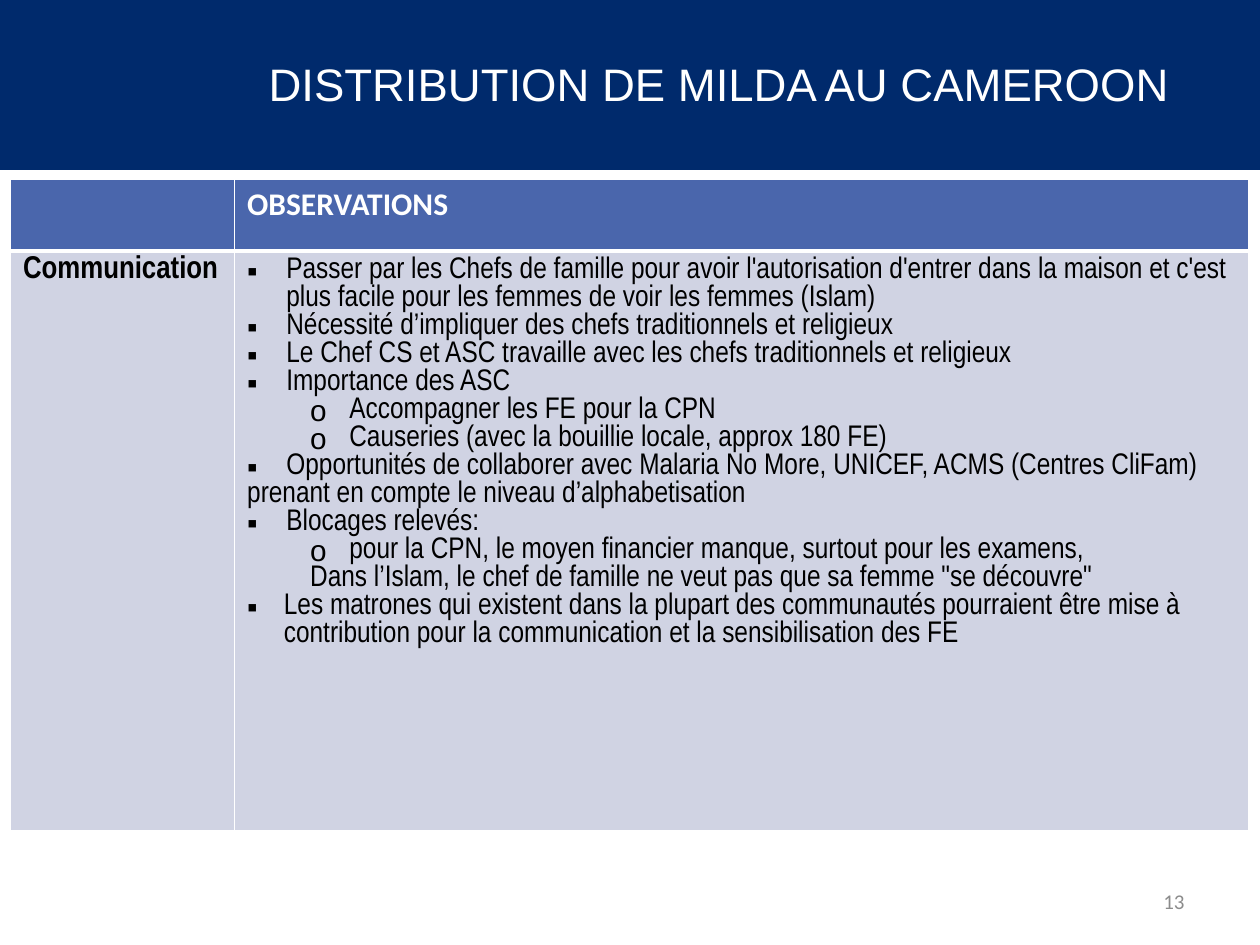
import dataclasses

import pptx
import pptx.dml.color
import pptx.enum.shapes
import pptx.enum.text
import pptx.oxml
import pptx.oxml.ns
import pptx.util
from lxml import etree

Cm = pptx.util.Cm
Pt = pptx.util.Pt


@dataclasses.dataclass(frozen=True)
class Theme:
    navy: str = "002A6C"
    header: str = "4A66AC"
    body: str = "D0D3E3"
    white: str = "FFFFFF"
    black: str = "000000"
    grey: str = "8C8C8C"
    title_size: float = 26
    head_size: float = 18
    body_size: float = 17
    number_size: float = 12
    leading: float = 16
    title_font: str = "Arial"
    head_font: str = "Calibri"
    body_font: str = "Arial Narrow"
    bullet_font: str = "Arial"


INDENTS = {
    "point": (0, 0.79, -0.79, "▪"),
    "detail": (1, 2.06, -0.79, "o"),
    "plain": (0, 0, 0, None),
    "remark": (1, 1.27, 0, None),
    "closing": (1, 0.74, -0.74, "▪"),
}

OBSERVATIONS = [
    ("point", "Passer par les Chefs de famille pour avoir l'autorisation d'entrer dans la maison "
              "et c'est plus facile pour les femmes de voir les femmes (Islam)"),
    ("point", "Nécessité d’impliquer des chefs traditionnels et religieux"),
    ("point", "Le Chef CS et ASC travaille avec les chefs traditionnels et religieux"),
    ("point", "Importance des ASC"),
    ("detail", "Accompagner les FE pour la CPN"),
    ("detail", "Causeries (avec la bouillie locale, approx 180 FE)"),
    ("point", "Opportunités de collaborer avec Malaria No More, UNICEF, ACMS (Centres CliFam)"),
    ("plain", "prenant en compte le niveau d’alphabetisation"),
    ("point", "Blocages relevés:"),
    ("detail", "pour la CPN, le moyen financier manque, surtout pour les examens,"),
    ("remark", "Dans l’Islam, le chef de famille ne veut pas que sa femme \"se découvre\""),
    ("closing", "Les matrones qui existent dans la plupart des communautés pourraient être mise à "
                "contribution pour la communication et la sensibilisation des FE"),
]


def rgb(value):
    return pptx.dml.color.RGBColor.from_string(value)


class SlideBuilder:
    def __init__(self, deck, theme):
        self.theme = theme
        self.slide = deck.slides.add_slide(deck.slide_layouts[5])

    def set_text(self, paragraph, text, font, size, color, bold=False):
        paragraph.text = text
        paragraph.font.name = font
        paragraph.font.size = Pt(size)
        paragraph.font.bold = bold
        paragraph.font.color.rgb = rgb(color)

    def title(self, text, left, top, width, height):
        heading = self.slide.shapes.title
        heading.left, heading.top = Cm(left), Cm(top)
        heading.width, heading.height = Cm(width), Cm(height)
        heading.text_frame.vertical_anchor = pptx.enum.text.MSO_ANCHOR.MIDDLE
        paragraph = heading.text_frame.paragraphs[0]
        paragraph.alignment = pptx.enum.text.PP_ALIGN.LEFT
        self.set_text(paragraph, text, self.theme.title_font,
                      self.theme.title_size, self.theme.white)

    def band(self, left, top, width, height):
        banner = self.slide.shapes.add_shape(
            pptx.enum.shapes.MSO_SHAPE.RECTANGLE, Cm(left), Cm(top), Cm(width), Cm(height))
        banner.shadow.inherit = False
        banner.fill.solid()
        banner.fill.fore_color.rgb = rgb(self.theme.navy)
        banner.line.color.rgb = rgb(self.theme.navy)
        banner.line.width = Pt(2)
        self.slide.shapes.title._element.addprevious(banner._element)

    def page_number(self, text, left, top, width, height):
        footer = self.slide.shapes.add_textbox(Cm(left), Cm(top), Cm(width), Cm(height)).text_frame
        footer.word_wrap = True
        footer.vertical_anchor = pptx.enum.text.MSO_ANCHOR.MIDDLE
        footer.paragraphs[0].alignment = pptx.enum.text.PP_ALIGN.RIGHT
        self.set_text(footer.paragraphs[0], text, self.theme.head_font,
                      self.theme.number_size, self.theme.grey)

    def table(self, left, top, columns, rows):
        grid = self.slide.shapes.add_table(
            len(rows), len(columns), Cm(left), Cm(top), Cm(sum(columns)), Cm(sum(rows))).table
        for column, width in zip(grid.columns, columns):
            column.width = Cm(width)
        for row, height in zip(grid.rows, rows):
            row.height = Cm(height)
        return grid

    def cell(self, cell, color, top=1, bottom=1):
        properties = cell._tc.get_or_add_tcPr()
        for side, width in (("L", 1), ("R", 1), ("T", top), ("B", bottom)):
            border = etree.SubElement(properties, pptx.oxml.ns.qn(f"a:ln{side}"), w=str(Pt(width)))
            fill = etree.SubElement(border, pptx.oxml.ns.qn("a:solidFill"))
            etree.SubElement(fill, pptx.oxml.ns.qn("a:srgbClr"), val=self.theme.white)
        cell.fill.solid()
        cell.fill.fore_color.rgb = rgb(color)

    def observations(self, frame, entries):
        for position, (kind, text) in enumerate(entries):
            paragraph = frame.add_paragraph() if position else frame.paragraphs[0]
            level, margin, hanging, mark = INDENTS[kind]
            paragraph.level = level
            paragraph.line_spacing = Pt(self.theme.leading)
            properties = paragraph._p.get_or_add_pPr()
            properties.set("marL", str(Cm(margin)))
            properties.set("indent", str(Cm(hanging)))
            if mark:
                etree.SubElement(properties, pptx.oxml.ns.qn("a:buFont"),
                                 typeface=self.theme.bullet_font)
                etree.SubElement(properties, pptx.oxml.ns.qn("a:buChar"), char=mark)
            else:
                etree.SubElement(properties, pptx.oxml.ns.qn("a:buNone"))
            self.set_text(paragraph, text, self.theme.body_font,
                          self.theme.body_size, self.theme.black)


def main():
    theme = Theme()
    deck = pptx.Presentation()
    deck.slide_width, deck.slide_height = Cm(25.4), Cm(19.05)
    builder = SlideBuilder(deck, theme)
    builder.title("DISTRIBUTION DE MILDA AU CAMEROON", 5.16, 0.08, 19.05, 3.18)
    builder.band(0, 0, 25.4, 3.39)
    builder.page_number("13", 18.2, 17.66, 5.93, 1.01)

    grid = builder.table(0.21, 3.61, [4.52, 20.45], [1.45, 11.68])
    for column in range(2):
        builder.cell(grid.cell(0, column), theme.header, bottom=3)
        builder.cell(grid.cell(1, column), theme.body, top=3)
    builder.set_text(grid.cell(0, 1).text_frame.paragraphs[0], "OBSERVATIONS",
                     theme.head_font, theme.head_size, theme.white, bold=True)
    topic = grid.cell(1, 0).text_frame.paragraphs[0]
    topic.line_spacing = Pt(theme.leading)
    builder.set_text(topic, "Communication", theme.body_font,
                     theme.head_size, theme.black, bold=True)
    builder.observations(grid.cell(1, 1).text_frame, OBSERVATIONS)
    deck.save("out.pptx")


if __name__ == "__main__":
    main()
